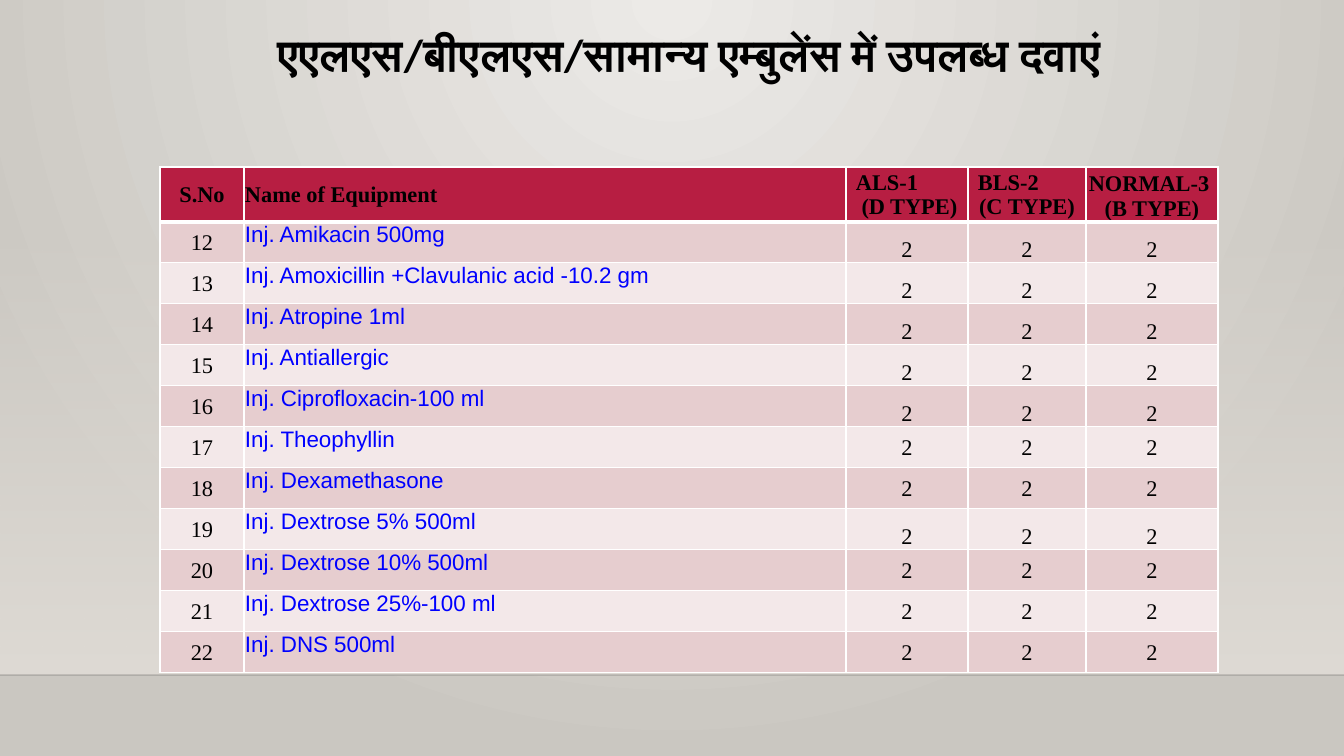
from dataclasses import dataclass

from lxml import etree
from pptx import Presentation
from pptx.dml.color import RGBColor
from pptx.enum.shapes import MSO_CONNECTOR as Connector, MSO_SHAPE as Shape
from pptx.enum.text import MSO_ANCHOR as Anchor, PP_ALIGN as Align
from pptx.oxml.ns import qn
from pptx.util import Emu, Pt


@dataclass(frozen=True)
class Theme:
    glow: str = "ECEAE7"
    edge: str = "CAC7C1"
    wall: str = "DFDBD5"
    floor_line: str = "000001"
    header: str = "B71E42"
    bands: tuple = ("E6CDCF", "F3E8E9")
    border: str = "FFFFFF"
    ink: str = "000000"
    medicine: str = "0000FF"
    title_font: str = "Calibri"
    table_font: str = "Times New Roman"
    medicine_font: str = "Arial"
    title_size: int = 32
    table_size: int = 16


THEME = Theme()
SLIDE_WIDTH, SLIDE_HEIGHT = 1344, 756
COLUMNS = (84, 602, 122, 118, 132)
HEADER_HEIGHT, ROW_HEIGHT = 50, 41
FIRST_NUMBER = 12
TITLE = "एएलएस/बीएलएस/सामान्य एम्बुलेंस में उपलब्ध दवाएं"

# Each header line: text, alignment, left indent in px
HEADERS = (
    (("S.No", Align.CENTER, 0),),
    (("Name of Equipment", Align.LEFT, 0),),
    (("ALS-1", Align.LEFT, 9), ("(D TYPE)", Align.CENTER, 5)),
    (("BLS-2", Align.LEFT, 9), ("(C TYPE)", Align.CENTER, 0)),
    (("NORMAL-3", Align.LEFT, 2), ("(B TYPE)", Align.CENTER, 0)),
)

# Each medicine: name, anchor of its quantities
MEDICINES = (
    ("Inj. Amikacin 500mg", Anchor.BOTTOM),
    ("Inj. Amoxicillin +Clavulanic acid -10.2 gm", Anchor.BOTTOM),
    ("Inj. Atropine 1ml", Anchor.BOTTOM),
    ("Inj. Antiallergic", Anchor.BOTTOM),
    ("Inj. Ciprofloxacin-100 ml", Anchor.BOTTOM),
    ("Inj. Theophyllin", Anchor.MIDDLE),
    ("Inj. Dexamethasone", Anchor.MIDDLE),
    ("Inj. Dextrose 5% 500ml", Anchor.BOTTOM),
    ("Inj. Dextrose 10% 500ml", Anchor.MIDDLE),
    ("Inj. Dextrose 25%-100 ml", Anchor.MIDDLE),
    ("Inj. DNS 500ml", Anchor.MIDDLE),
)
QUANTITIES = ("2", "2", "2")


def px(length):
    return Emu(round(length * 914400 / 100.8))


def rgb(value):
    return RGBColor.from_string(value)


def add_xml(parent, tag, **attributes):
    return etree.SubElement(parent, qn(tag), attributes)


def add_run(paragraph, text, font_name, size, color, bold=False):
    run = paragraph.add_run()
    run.text = text
    font = run.font
    font.name, font.size, font.bold = font_name, Pt(size), bold
    font.color.rgb = rgb(color)
    return run


def set_stops(fill, colors):
    for stop, color in zip(fill.gradient_stops, colors):
        stop.color.rgb = rgb(color)


def paint_background(slide):
    fill = slide.background.fill
    fill.gradient()
    set_stops(fill, (THEME.glow, THEME.edge))
    gradient = slide.element.find(".//" + qn("a:gradFill"))
    gradient.remove(gradient.find(qn("a:lin")))
    circle = add_xml(gradient, "a:path", path="circle")
    add_xml(circle, "a:fillToRect", l="43000", t="0", r="43000", b="100000")


def add_wall(slide, left, top, width, height):
    # Wall that fades in downwards
    wall = slide.shapes.add_shape(Shape.RECTANGLE, px(left), px(top), px(width), px(height))
    wall.shadow.inherit = False
    wall.line.fill.background()
    wall.fill.gradient()
    wall.fill.gradient_angle = 270
    set_stops(wall.fill, (THEME.wall, THEME.wall))
    add_xml(wall.element.find(".//" + qn("a:srgbClr")), "a:alpha", val="0")

    # Faint line where the wall meets the floor
    bottom = px(top + height)
    line = slide.shapes.add_connector(Connector.STRAIGHT, px(left), bottom, px(left + width), bottom)
    line.line.width = Pt(1)
    line.line.color.rgb = rgb(THEME.floor_line)
    add_xml(line.element.find(".//" + qn("a:srgbClr")), "a:alpha", val="20000")
    add_xml(line.element.spPr, "a:effectLst")


def add_title(slide, left, top, width, height):
    frame = slide.shapes.add_textbox(px(left), px(top), px(width), px(height)).text_frame
    frame.word_wrap = True
    frame.vertical_anchor = Anchor.TOP
    paragraph = frame.paragraphs[0]
    paragraph.alignment = Align.CENTER
    paragraph.line_spacing = 0.9
    run = add_run(paragraph, TITLE, THEME.title_font, THEME.title_size, THEME.ink, bold=True)
    add_xml(run.font._element, "a:cs", typeface=THEME.title_font)


def style_cell(cell, color, anchor, top_line=1, bottom_line=1):
    cell.fill.solid()
    cell.fill.fore_color.rgb = rgb(color)
    cell.vertical_anchor = anchor
    cell.margin_left = cell.margin_right = cell.margin_top = px(1)
    cell.margin_bottom = 0
    properties = cell._tc.get_or_add_tcPr()
    sides = (("a:lnL", 1), ("a:lnR", 1), ("a:lnT", top_line), ("a:lnB", bottom_line))
    for position, (tag, width) in enumerate(sides):
        border = add_xml(properties, tag, w=str(Pt(width)))
        add_xml(add_xml(border, "a:solidFill"), "a:srgbClr", val=THEME.border)
        properties.insert(position, border)


def fill_header(table):
    for column, lines in enumerate(HEADERS):
        cell = table.cell(0, column)
        last = column == len(HEADERS) - 1
        style_cell(cell, THEME.header, Anchor.BOTTOM if last else Anchor.MIDDLE, bottom_line=3)
        for index, (text, alignment, indent) in enumerate(lines):
            frame = cell.text_frame
            paragraph = frame.add_paragraph() if index else frame.paragraphs[0]
            paragraph.alignment = alignment
            if indent:
                paragraph._p.get_or_add_pPr().set("marL", str(px(indent)))
            add_run(paragraph, text, THEME.table_font, THEME.table_size, THEME.ink, bold=True)


def fill_medicine(table, row, name, quantity_anchor):
    texts = (str(FIRST_NUMBER + row - 1), name, *QUANTITIES)
    anchors = (Anchor.MIDDLE, Anchor.TOP) + (quantity_anchor,) * len(QUANTITIES)
    for column, (text, anchor) in enumerate(zip(texts, anchors)):
        cell = table.cell(row, column)
        style_cell(cell, THEME.bands[(row - 1) % 2], anchor, top_line=3 if row == 1 else 1)
        paragraph = cell.text_frame.paragraphs[0]
        is_name = column == 1
        paragraph.alignment = Align.LEFT if is_name else Align.CENTER
        font_name = THEME.medicine_font if is_name else THEME.table_font
        color = THEME.medicine if is_name else THEME.ink
        add_run(paragraph, text, font_name, THEME.table_size, color)


def add_medicine_table(slide, left, top):
    heights = [HEADER_HEIGHT] + [ROW_HEIGHT] * len(MEDICINES)
    table = slide.shapes.add_table(len(heights), len(COLUMNS), px(left), px(top),
                                   px(sum(COLUMNS)), px(sum(heights))).table
    table.horz_banding = False
    for column, width in zip(table.columns, COLUMNS):
        column.width = px(width)
    for row, height in zip(table.rows, heights):
        row.height = px(height)
    fill_header(table)
    for row, (name, anchor) in enumerate(MEDICINES, start=1):
        fill_medicine(table, row, name, anchor)


def main():
    presentation = Presentation()
    presentation.slide_width, presentation.slide_height = px(SLIDE_WIDTH), px(SLIDE_HEIGHT)
    slide = presentation.slides.add_slide(presentation.slide_layouts[6])
    paint_background(slide)
    add_wall(slide, 0, 223, SLIDE_WIDTH, 452)
    add_title(slide, 160, 28, sum(COLUMNS), 116)
    add_medicine_table(slide, 160, 167)
    presentation.save("out.pptx")


if __name__ == "__main__":
    main()
